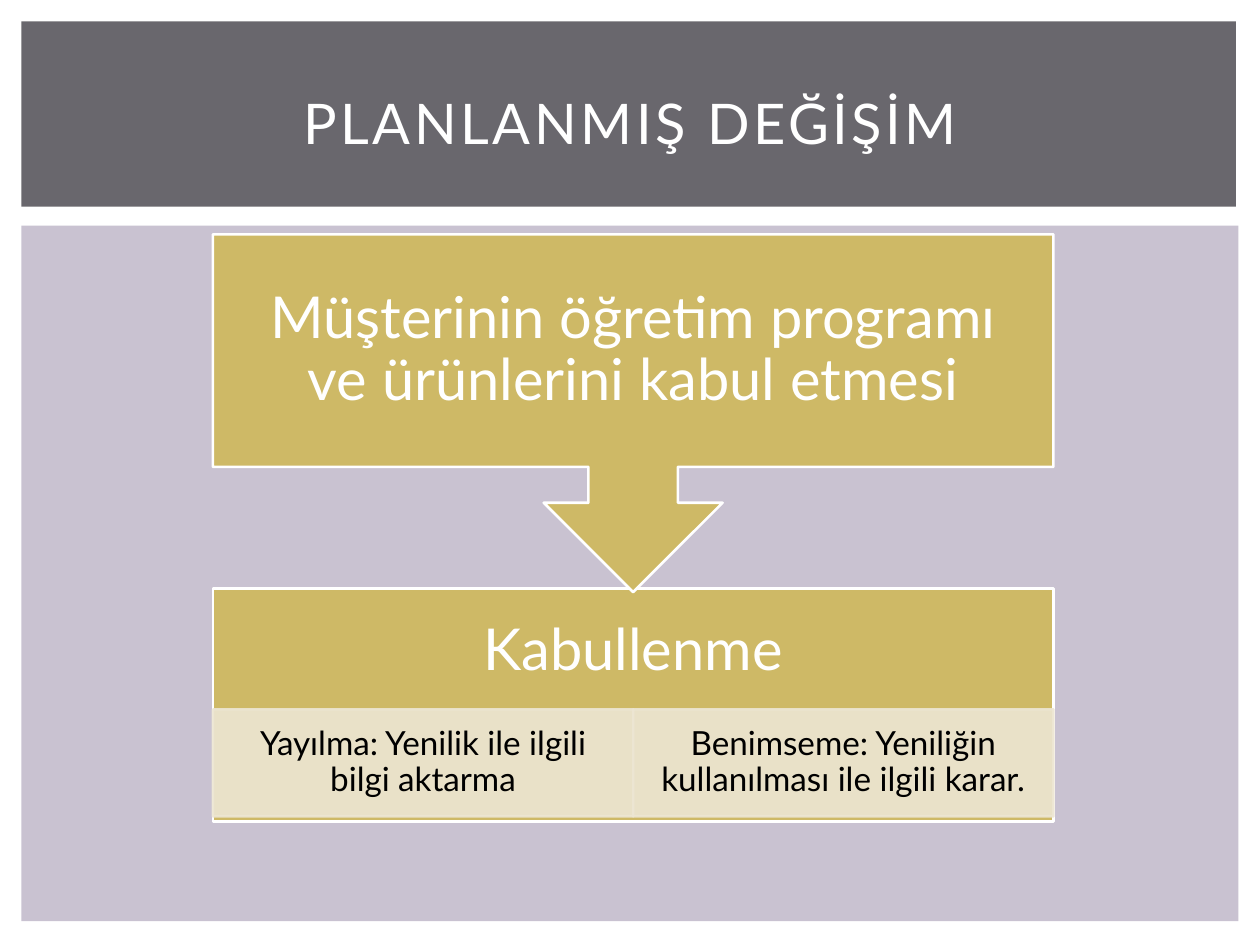
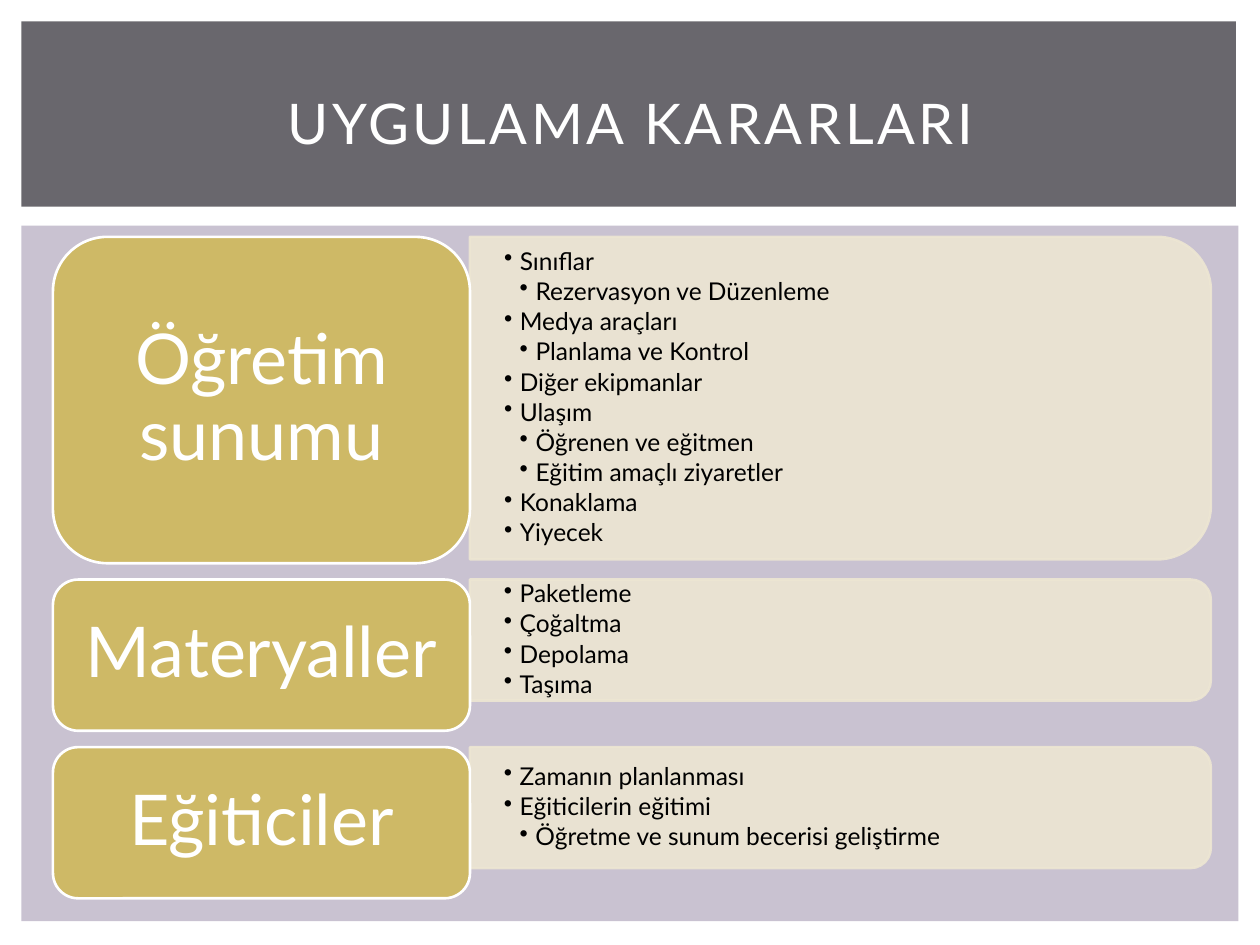
from lxml import etree
from pptx import Presentation
from pptx.dml.color import RGBColor
from pptx.enum import shapes, text
from pptx.oxml.ns import qn
from pptx.util import Inches, Pt

ACCEPTANCE = {
    "title": "PLANLANMIŞ DEĞİŞİM",
    "cause": "Müşterinin öğretim programı ve ürünlerini kabul etmesi",
    "result": "Kabullenme",
    "parts": [
        "Yayılma: Yenilik ile ilgili bilgi aktarma",
        "Benimseme: Yeniliğin kullanılması ile ilgili karar.",
    ],
}
DECISIONS_TITLE = "UYGULAMA KARARLARI"
# Heading, card height, detail height, (level, item)
DECISIONS = [
    ("Öğretim sunumu", 2.59, 2.56, [
        (1, "Sınıflar"),
        (2, "Rezervasyon ve Düzenleme"),
        (1, "Medya araçları"),
        (2, "Planlama ve Kontrol"),
        (1, "Diğer ekipmanlar"),
        (1, "Ulaşım"),
        (2, "Öğrenen ve eğitmen"),
        (2, "Eğitim amaçlı ziyaretler"),
        (1, "Konaklama"),
        (1, "Yiyecek"),
    ]),
    ("Materyaller", 1.2, 0.96, [
        (1, "Paketleme"), (1, "Çoğaltma"), (1, "Depolama"), (1, "Taşıma"),
    ]),
    ("Eğiticiler", 1.2, 0.96, [
        (1, "Zamanın planlanması"),
        (1, "Eğiticilerin eğitimi"),
        (2, "Öğretme ve sunum becerisi geliştirme"),
    ]),
]

FONT = "Lato"
WHITE = RGBColor(0xFF, 0xFF, 0xFF)
BLACK = RGBColor(0, 0, 0)
LILAC = RGBColor(0xC9, 0xC2, 0xD1)
SLATE = RGBColor(0x69, 0x67, 0x6D)
GOLD = RGBColor(0xCE, 0xB9, 0x66)
CREAM = RGBColor(0xED, 0xE6, 0xD3)
KIND = shapes.MSO_SHAPE


def add_block(page, kind, place, colour, outline=None, rotation=0):
    block = page.shapes.add_shape(kind, *map(Inches, place))
    block.shadow.inherit = False
    block.rotation = rotation
    block.fill.solid()
    block.fill.fore_color.rgb = colour
    if outline is None:
        block.line.fill.background()
    else:
        block.line.color.rgb = outline
        block.line.width = Pt(1.5)
    return block


def add_cream_block(page, kind, place, rotation=0):
    """Add a block whose fill and outline are 90 % opaque."""
    block = add_block(page, kind, place, CREAM, CREAM, rotation)
    for colour in block._element.spPr.iter(qn("a:srgbClr")):
        etree.SubElement(colour, qn("a:alpha")).set("val", "90000")


def add_frame(page, place, insets):
    """Add an empty, middle-anchored text box; insets are (side, top and bottom)."""
    frame = page.shapes.add_textbox(*map(Inches, place)).text_frame
    frame.word_wrap = True
    frame.vertical_anchor = text.MSO_ANCHOR.MIDDLE
    frame.margin_left = frame.margin_right = Inches(insets[0])
    frame.margin_top = frame.margin_bottom = Inches(insets[1])
    return frame


def add_span(para, words, size, colour):
    span = para.add_run()
    span.text = words
    span.font.name = FONT
    span.font.size = Pt(size)
    span.font.color.rgb = colour
    return span


def add_caption(page, place, words, size, colour=WHITE, insets=(0.26, 0.26)):
    para = add_frame(page, place, insets).paragraphs[0]
    para.alignment = text.PP_ALIGN.CENTER
    para.line_spacing = 0.9
    add_span(para, words, size, colour)


def add_bullets(page, place, items):
    frame = add_frame(page, place, (0.27, 0.14))
    for index, (level, words) in enumerate(items):
        para = frame.add_paragraph() if index else frame.paragraphs[0]
        para.level = level
        para.line_spacing = 0.9
        para.space_after = Pt(2.1)
        props = para._p.get_or_add_pPr()
        props.set("marL", str(Inches(0.125 * level)))
        props.set("indent", str(Inches(-0.125)))
        etree.SubElement(props, qn("a:buChar")).set("char", "•")
        add_span(para, words, 14, BLACK)


def add_page(deck, title):
    page = deck.slides.add_slide(deck.slide_layouts[6])
    add_block(page, KIND.RECTANGLE, (0.17, 1.79, 9.66, 5.52), LILAC)
    add_block(page, KIND.RECTANGLE, (0.17, 0.17, 9.64, 1.47), SLATE)
    para = add_frame(page, (0.42, 0.39, 9.17, 1.15), (0.1, 0.05)).paragraphs[0]
    para.alignment = text.PP_ALIGN.CENTER
    span = add_span(para, title, 32, WHITE)
    span.font._element.set("spc", "200")
    return page


def build_acceptance(deck):
    page = add_page(deck, ACCEPTANCE["title"])
    left, width, result_top, box_height = 1.69, 6.67, 4.67, 1.85
    add_block(page, KIND.RECTANGLE, (left, result_top, width, box_height), GOLD, WHITE)
    add_caption(page, (left, result_top, width, 1), ACCEPTANCE["result"], 33)

    part_width = width / len(ACCEPTANCE["parts"])
    for index, words in enumerate(ACCEPTANCE["parts"]):
        place = (left + index * part_width, 5.63, part_width, 0.85)
        add_cream_block(page, KIND.RECTANGLE, place)
        add_caption(page, place, words, 19, BLACK, (0.15, 0.03))

    cause_top = 1.86
    add_block(page, KIND.UP_ARROW_CALLOUT, (left, cause_top, width, 2.84),
              GOLD, WHITE, rotation=180)
    add_caption(page, (left, cause_top, width, box_height), ACCEPTANCE["cause"], 33)


def build_decisions(deck):
    page = add_page(deck, DECISIONS_TITLE)
    left, top, gap = 0.42, 1.88, 0.13
    card_width, detail_width = 3.31, 5.88
    corner = 0.049  # text inset of a rounded corner, as a share of the height
    detail_left = left + card_width
    for heading, card_height, detail_height, items in DECISIONS:
        # The detail is drawn upright and turned a quarter about its centre.
        shift = (detail_width - detail_height) / 2
        add_cream_block(page, KIND.ROUND_2_SAME_RECTANGLE,
                        (detail_left + shift, top - shift, detail_height, detail_width),
                        rotation=90)
        inset = corner * detail_height
        add_bullets(page, (detail_left, top + inset, detail_width - inset,
                           detail_height - 2 * inset), items)

        add_block(page, KIND.ROUNDED_RECTANGLE,
                  (left, top, card_width, card_height), GOLD, WHITE)
        inset = corner * card_height
        add_caption(page, (left + inset, top + inset, card_width - 2 * inset,
                           card_height - 2 * inset), heading, 40, insets=(0.17, 0.08))
        top += card_height + gap


def main():
    deck = Presentation()
    deck.slide_width, deck.slide_height = Inches(10), Inches(7.5)
    build_acceptance(deck)
    build_decisions(deck)
    deck.save("out.pptx")


if __name__ == "__main__":
    main()
